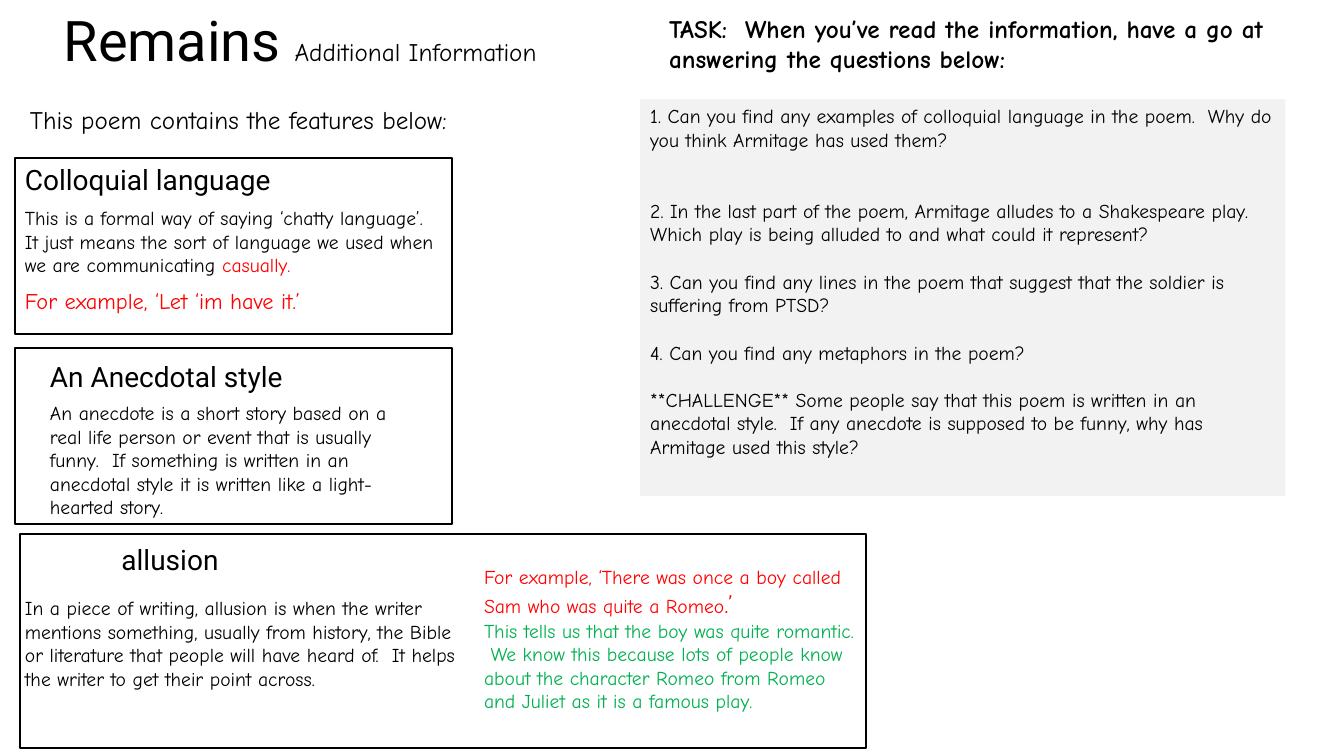
from lxml import etree
from pptx import Presentation
from pptx import util as u
from pptx.dml.color import RGBColor
from pptx.enum import shapes, text
from pptx.oxml.ns import qn

PX = 914400 / 100.8
BLACK = RGBColor(0x00, 0x00, 0x00)
RED = RGBColor(0xFF, 0x00, 0x00)
GREEN = RGBColor(0x00, 0xB0, 0x50)
GREY = RGBColor(0xF2, 0xF2, 0xF2)
HEADING_FONT = "Roboto"
BODY_FONT = "Comic Neue"


def px(value):
    return u.Emu(round(value * PX))


class Worksheet:
    def __init__(self, deck):
        self.page = deck.slides.add_slide(deck.slide_layouts[1])
        self.title_box, self.body_box = self.page.placeholders

    def style(self, font, size, colour=BLACK, name=BODY_FONT, bold=False):
        font.name, font.size, font.bold = name, u.Pt(size), bold
        font.color.rgb = colour

    def place(self, box, left, top, width, height):
        box.left, box.top = px(left), px(top)
        box.width, box.height = px(width), px(height)
        frame = box.text_frame
        frame.word_wrap = True
        frame.auto_size = text.MSO_AUTO_SIZE.NONE
        frame.vertical_anchor = text.MSO_ANCHOR.TOP
        return frame

    def spans(self, para, *parts):
        for words, style in parts:
            span = para.add_run()
            span.text = words
            self.style(span.font, **style)

    def title(self, area, *parts):
        para = self.place(self.title_box, *area).paragraphs[0]
        para.alignment = text.PP_ALIGN.CENTER
        self.spans(para, *parts)

    def questions(self, area, items):
        frame = self.place(self.body_box, *area)
        self.body_box.fill.solid()
        self.body_box.fill.fore_color.rgb = GREY
        for index, (gap, words) in enumerate(items):
            para = frame.add_paragraph() if index else frame.paragraphs[0]
            para.text = words
            para.space_before = u.Pt(gap)
            self.style(para.font, 14)
            props = para._p.get_or_add_pPr()
            props.set("marL", "0")
            props.set("indent", "0")
            bullet = etree.Element(qn("a:buNone"))
            props.find(qn("a:spcBef")).addnext(bullet)

    def textbox(self, area):
        box = self.page.shapes.add_textbox(*map(px, area))
        return self.place(box, *area)

    def label(self, area, words, size, align=None, **style):
        para = self.textbox(area).paragraphs[0]
        para.text = words
        para.alignment = align
        self.style(para.font, size, **style)

    def heading(self, area, words, align=None):
        self.label(area, words, 20, align, name=HEADING_FONT)

    def passage(self, area, *paragraphs):
        frame = self.textbox(area)
        for index, parts in enumerate(paragraphs):
            para = frame.add_paragraph() if index else frame.paragraphs[0]
            self.spans(para, *parts)

    def outline(self, *area):
        box = self.page.shapes.add_shape(shapes.MSO_SHAPE.RECTANGLE, *map(px, area))
        box.shadow.inherit = False
        box.fill.background()
        box.line.color.rgb = BLACK
        box.line.width = u.Pt(1)


def main():
    deck = Presentation()
    deck.slide_width, deck.slide_height = u.Inches(13.33), u.Inches(7.5)
    sheet = Worksheet(deck)

    sheet.title(
        (-36, 0, 672, 78),
        ("Remains ", dict(size=40, name=HEADING_FONT)),
        ("Additional Information", dict(size=18)),
    )
    sheet.label((20, 99, 638, 40), "This poem contains the features below:", 18)

    sheet.heading((15, 158, 826, 44), "Colloquial language")
    sheet.passage(
        (15, 201, 437, 82),
        [
            ("This is a formal way of saying ‘chatty language’.  It just means the sort "
             "of language we used when we are communicating ", dict(size=14)),
            ("casually.", dict(size=14, colour=RED)),
        ],
    )
    sheet.label((15, 282, 674, 37), "For example, ‘Let ‘im have it.’", 16, colour=RED)
    sheet.outline(15, 158, 437, 176)

    sheet.heading((40, 355, 826, 44), "An Anecdotal style")
    sheet.label(
        (40, 396, 388, 129),
        "An anecdote is a short story based on a real life person or event that is "
        "usually funny.  If something is written in an anecdotal style it is written "
        "like a light-hearted story.",
        14,
    )
    sheet.outline(15, 348, 437, 176)

    sheet.heading((-243, 538, 826, 44), "allusion", text.PP_ALIGN.CENTER)
    sheet.label(
        (15, 591, 462, 129),
        "In a piece of writing, allusion is when the writer mentions something, usually "
        "from history, the Bible or literature that people will have heard of.  It helps "
        "the writer to get their point across.",
        14,
    )
    sheet.passage(
        (474, 560, 392, 190),
        [
            ("For example, ‘There was once a boy called Sam who was quite a Romeo",
             dict(size=14, colour=RED)),
            (".’", dict(size=18, colour=RED)),
        ],
        [
            ("This tells us that the boy was quite romantic.  We know this because lots of "
             "people know about the character Romeo from Romeo and Juliet as it is a "
             "famous play.", dict(size=14, colour=GREEN)),
        ],
    )
    sheet.outline(20, 534, 846, 214)

    sheet.label(
        (659, 8, 660, 72),
        "TASK:  When you’ve read the information, have a go at answering the "
        "questions below:",
        18,
        bold=True,
    )
    sheet.questions(
        (640, 99, 645, 397),
        [
            (0, "1. Can you find any examples of colloquial language in the poem.  "
                "Why do you think Armitage has used them?"),
            (34, "2. In the last part of the poem, Armitage alludes to a Shakespeare "
                 "play.  Which play is being alluded to and what could it represent?"),
            (17, "3. Can you find any lines in the poem that suggest that the soldier "
                 "is suffering from PTSD?"),
            (17, "4. Can you find any metaphors in the poem?"),
            (17, "**CHALLENGE** Some people say that this poem is written in an "
                 "anecdotal style.  If any anecdote is supposed to be funny, why has "
                 "Armitage used this style?"),
        ],
    )
    deck.save("out.pptx")


if __name__ == "__main__":
    main()
